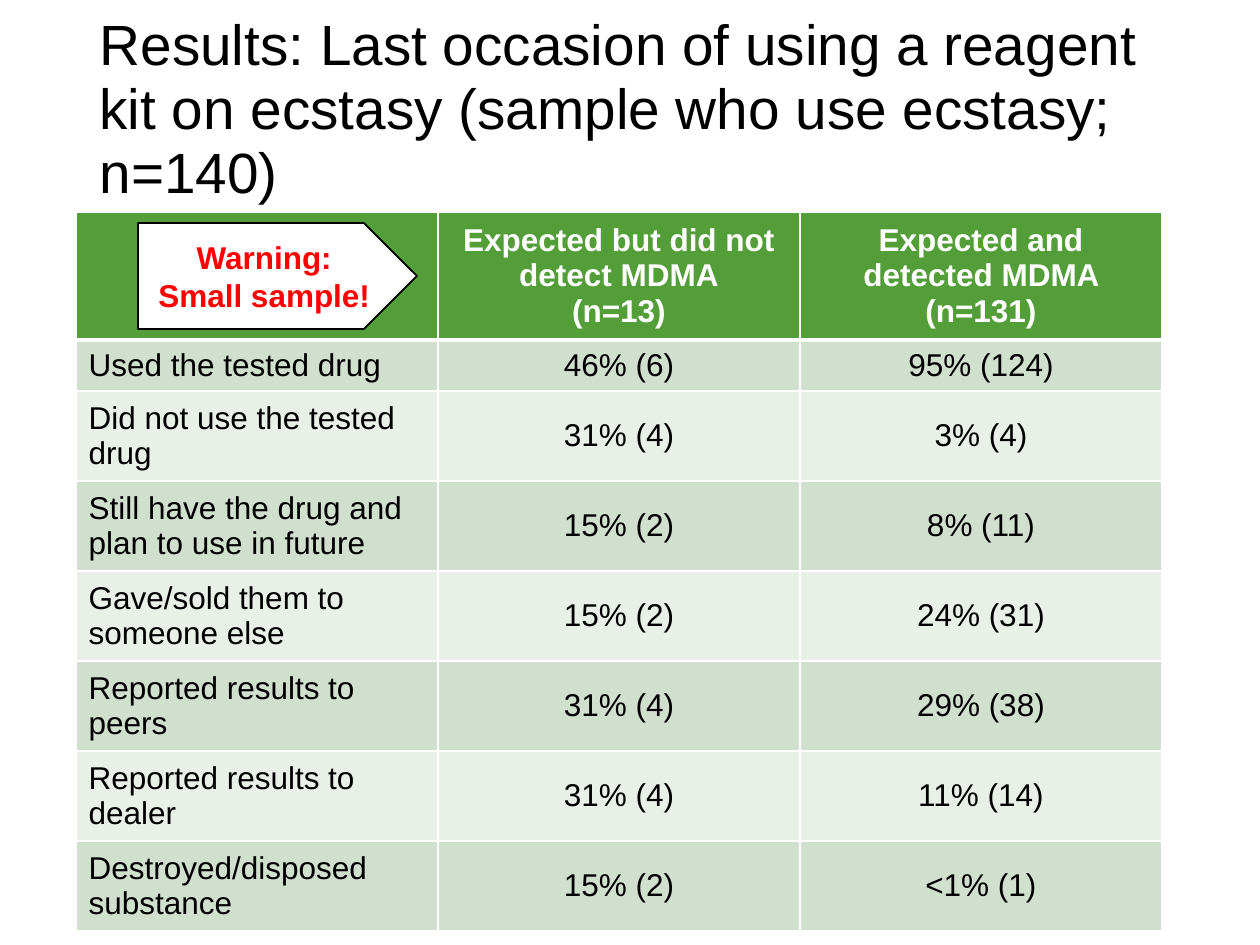
"""Build the slide on the last occasion of using a reagent kit on ecstasy."""
from lxml.etree import SubElement
from pptx import Presentation
from pptx.dml.color import RGBColor
from pptx.enum.shapes import MSO_SHAPE as Shape
from pptx.enum.text import MSO_ANCHOR as Anchor, MSO_AUTO_SIZE as AutoSize, PP_ALIGN as Align
from pptx.oxml.ns import qn
from pptx.util import Pt

PX = 914400 / 126
WHITE, GREEN, BANDS = "FFFFFF", "549E39", ("E9F0E8", "D1DFCE")


def px(*lengths):
    return [round(length * PX) for length in lengths]


def style(paragraph, size, color, bold=False, align=Align.CENTER):
    paragraph.alignment = align
    paragraph.font.name = "Arial"
    paragraph.font.size = Pt(size)
    paragraph.font.bold = bold
    paragraph.font.color.rgb = RGBColor.from_string(color)


prs = Presentation()
prs.slide_width, prs.slide_height = px(1260, 945)
slide = prs.slides.add_slide(prs.slide_layouts[5])

title = slide.shapes.title
title.left, title.top, title.width, title.height = px(87, 50, 1086, 121)
heading = title.text_frame
heading.text = "Results: Last occasion of using a reagent kit on ecstasy (sample who use ecstasy; n=140)"
heading.word_wrap = True
heading.auto_size = AutoSize.NONE
heading.vertical_anchor = Anchor.MIDDLE
heading.paragraphs[0].line_spacing = 0.94
style(heading.paragraphs[0], 32.4, "000000", align=Align.LEFT)

outcomes = [
    ("", "Expected but did not detect MDMA\n(n=13)", "Expected and detected MDMA (n=131)"),
    ("Used the tested drug", "46% (6)", "95% (124)"),
    ("Did not use the tested drug", "31% (4)", "3% (4)"),
    ("Still have the drug and plan to use in future", "15% (2)", "8% (11)"),
    ("Gave/sold them to someone else", "15% (2)", "24% (31)"),
    ("Reported results to peers", "31% (4)", "29% (38)"),
    ("Reported results to dealer", "31% (4)", "11% (14)"),
    ("Destroyed/disposed substance", "15% (2)", "<1% (1)"),
]
row_heights = px(128, 51, *[90] * 6)
results = slide.shapes.add_table(len(outcomes), 3, *px(76, 212, 1086, 719)).table
for column in results.columns:
    column.width = px(362)[0]

for r, outcome in enumerate(outcomes):
    results.rows[r].height = row_heights[r]
    for c, wording in enumerate(outcome):
        cell = results.cell(r, c)
        cell.text = wording
        cell.vertical_anchor = Anchor.MIDDLE
        for paragraph in cell.text_frame.paragraphs:
            style(paragraph, 18, "000000" if r else WHITE, bold=r == 0,
                  align=Align.CENTER if c else Align.LEFT)
        for side in "LRTB":
            under_header = (r, side) in ((0, "B"), (1, "T"))
            border = SubElement(cell._tc.get_or_add_tcPr(), qn(f"a:ln{side}"),
                                w=str(Pt(3 if under_header else 1)))
            SubElement(SubElement(border, qn("a:solidFill")), qn("a:srgbClr"), val=WHITE)
        cell.fill.solid()
        cell.fill.fore_color.rgb = RGBColor.from_string(BANDS[r % 2] if r else GREEN)

warning = slide.shapes.add_shape(Shape.PENTAGON, *px(138, 223, 279, 106))
warning.shadow.inherit = False
warning.fill.solid()
warning.fill.fore_color.rgb = RGBColor.from_string(WHITE)
warning.line.color.rgb = RGBColor.from_string("000000")
warning.line.width = Pt(1)
caution = warning.text_frame
caution.text = "Warning: Small sample!"
caution.word_wrap = True
caution.vertical_anchor = Anchor.MIDDLE
style(caution.paragraphs[0], 18, "FF0000", bold=True)

prs.save("out.pptx")
